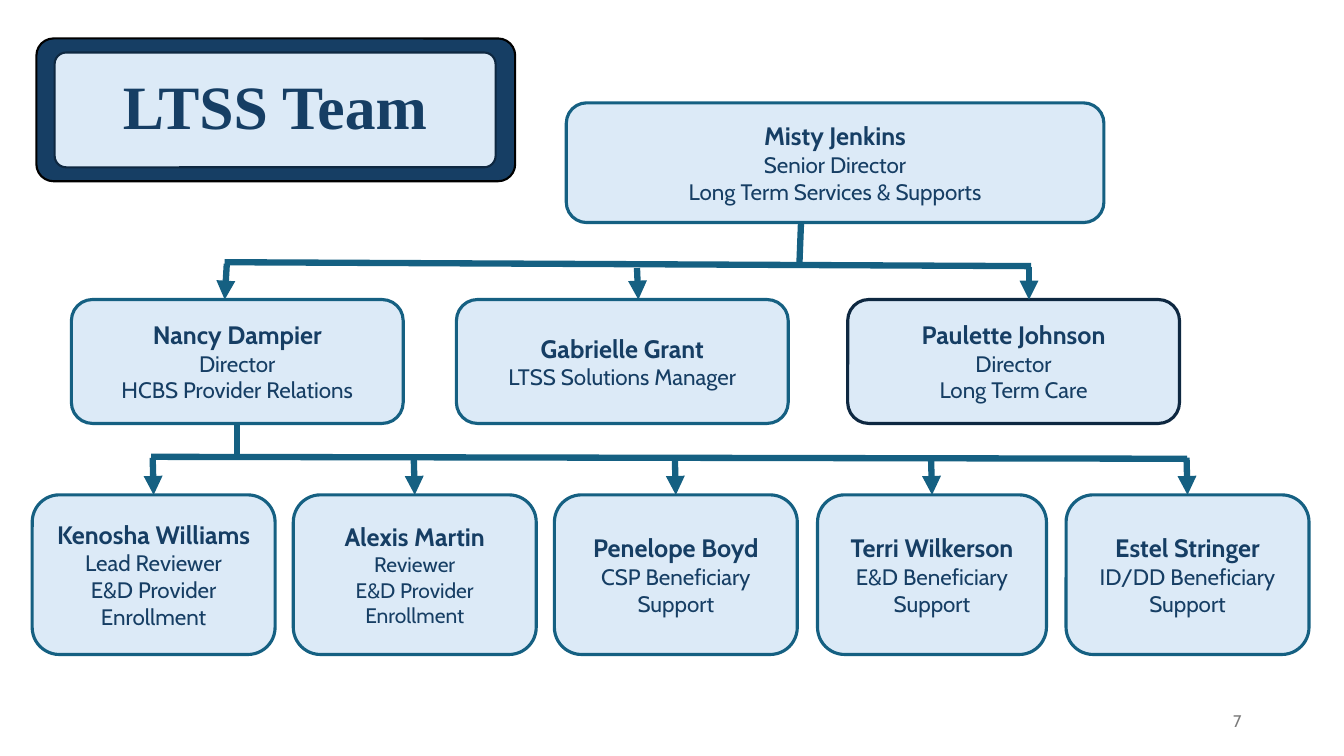
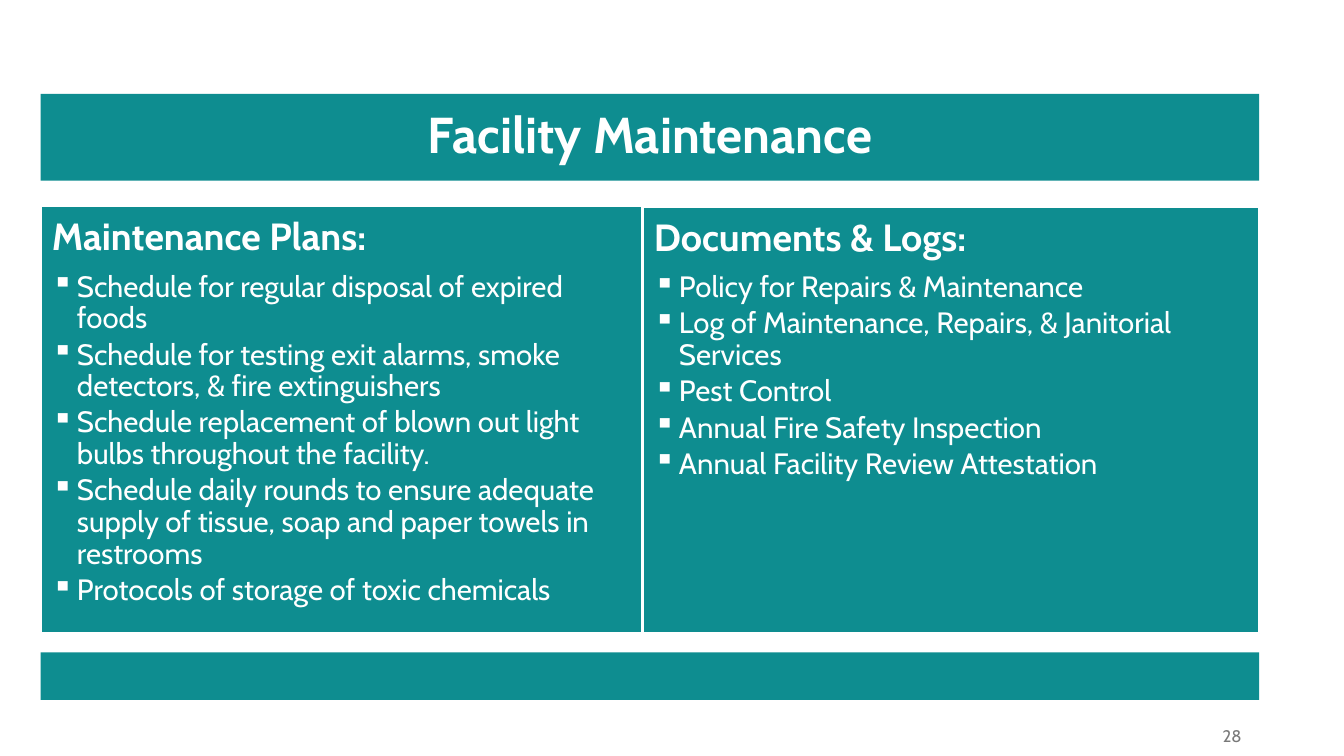
from dataclasses import dataclass

from lxml import etree
from pptx import Presentation
from pptx import util as u
from pptx.dml import color
from pptx.enum import shapes, text
from pptx.oxml import ns

Pt = u.Pt
ALIGN = text.PP_ALIGN
ANCHOR = text.MSO_ANCHOR


@dataclass(frozen=True)
class Theme:
    """Hold the colours, fonts and type sizes shared by the slides."""
    navy: str = "163E64"
    dark: str = "0E2841"
    black: str = "000000"
    pale: str = "DCEAF7"
    blue: str = "156082"
    teal: str = "0E8D90"
    white: str = "FFFFFF"
    grey: str = "797979"
    body_font: str = "Cabin"
    badge_font: str = "Times New Roman"
    badge_size: int = 44
    band_size: int = 36
    panel_heading_size: int = 27
    panel_item_size: int = 21
    name_size: int = 18
    role_size: int = 16
    small_role_size: int = 15
    number_size: int = 12
    card_line: float = 2.25
    thin_line: float = 1.5
    connector_line: float = 4.5


THEME = Theme()


def rgb(value):
    """Turn a hexadecimal string into a colour."""
    return color.RGBColor.from_string(value)


def add_text(frame, content, size, ink, bold=False, font=THEME.body_font,
             align=ALIGN.CENTER, spacing=None, after=None, bullet=None, indent=18):
    """Write one formatted paragraph at the end of a text frame."""
    paragraph = frame.paragraphs[0]
    if paragraph.runs:
        paragraph = frame.add_paragraph()
    paragraph.alignment = align
    if bullet:
        properties = paragraph._p.get_or_add_pPr()
        properties.set("marL", str(Pt(indent)))
        properties.set("indent", str(-Pt(indent)))
        etree.SubElement(properties, ns.qn("a:buChar")).set("char", bullet)
    if spacing:
        paragraph.line_spacing = spacing
    if after:
        paragraph.space_after = Pt(after)
    run = paragraph.add_run()
    run.text = content
    run.font.name = font
    run.font.size = Pt(size)
    run.font.bold = bold
    run.font.color.rgb = rgb(ink)


def add_box(slide, box, fill, line=None, width=THEME.thin_line, rounding=None,
            anchor=ANCHOR.MIDDLE, inset=None):
    """Draw a filled rectangle, rounded if a rounding is given."""
    kind = shapes.MSO_SHAPE.RECTANGLE if rounding is None else shapes.MSO_SHAPE.ROUNDED_RECTANGLE
    shape = slide.shapes.add_shape(kind, *map(Pt, box))
    shape.shadow.inherit = False
    shape.fill.solid()
    shape.fill.fore_color.rgb = rgb(fill)
    if rounding is not None:
        shape.adjustments[0] = rounding
    if line:
        shape.line.color.rgb = rgb(line)
        shape.line.width = Pt(width)
    else:
        shape.line.fill.background()
    frame = shape.text_frame
    frame.word_wrap = True
    frame.vertical_anchor = anchor
    if inset is not None:
        frame.margin_left = frame.margin_right = Pt(inset)
        frame.margin_top = frame.margin_bottom = Pt(inset)
    return shape


def add_line(slide, start, end, arrow=False):
    """Draw a thick straight connector between two points."""
    connector = slide.shapes.add_connector(
        shapes.MSO_CONNECTOR.STRAIGHT, *map(Pt, (*start, *end)))
    connector.line.color.rgb = rgb(THEME.blue)
    connector.line.width = Pt(THEME.connector_line)
    if arrow:
        outline = connector.line._get_or_add_ln()
        etree.SubElement(outline, ns.qn("a:tailEnd")).set("type", "triangle")
    etree.SubElement(connector._element.spPr, ns.qn("a:effectLst"))
    return connector


def add_page_number(slide, number, top):
    """Write the page number at the lower right."""
    holder = slide.shapes.add_textbox(*map(Pt, (678, top, 216, 29)))
    holder.text_frame.word_wrap = True
    holder.text_frame.vertical_anchor = ANCHOR.MIDDLE
    add_text(holder.text_frame, number, THEME.number_size, THEME.grey, align=ALIGN.RIGHT)


def add_title_badge(slide, box, title):
    """Draw a framed title badge."""
    left, top, width, height = box
    add_box(slide, box, THEME.navy, THEME.black, rounding=0.12)
    inner = (left + 13, top + 10, width - 27, height - 20)
    plate = add_box(slide, inner, THEME.pale, THEME.dark, rounding=0.1)
    add_text(plate.text_frame, title, THEME.badge_size, THEME.navy, bold=True,
             font=THEME.badge_font, spacing=0.9)


def add_card(slide, box, name, roles, line=THEME.blue, role_size=THEME.role_size):
    """Draw one person's card with a name and role lines."""
    card = add_box(slide, box, THEME.pale, line, THEME.card_line, rounding=0.17)
    add_text(card.text_frame, name, THEME.name_size, THEME.navy, bold=True)
    for role in roles:
        add_text(card.text_frame, role, role_size, THEME.navy)
    return card


def add_org_chart(slide, box):
    """Draw the three levels of the team and the lines between them."""
    left, top, width, height = box
    directors_top, staff_top = top + 140.5, top + 280
    upper_bus, lower_bus = top + 115, top + 253.5

    add_line(slide, (left + 85, lower_bus - 0.7), (left + 825, lower_bus + 0.7))
    add_line(slide, (left + 548, upper_bus + 1), (left + 549.5, top + 77))

    add_card(slide, (left + 381.5, top, 384, 85.5), "Misty Jenkins",
             ["Senior Director", "Long Term Services & Supports"])
    directors = [
        (28, "Nancy Dampier", ["Director", "HCBS Provider Relations"], THEME.blue),
        (303, "Gabrielle Grant", ["LTSS Solutions Manager"], THEME.blue),
        (582.5, "Paulette Johnson", ["Director", "Long Term Care"], THEME.dark),
    ]
    director_cards = [
        add_card(slide, (left + x, directors_top, 237, 88.5), name, roles, line)
        for x, name, roles, line in directors]

    staff = [
        (0, 173.5, "Kenosha Williams",
         ["Lead Reviewer", "E&D Provider Enrollment"], THEME.role_size),
        (186.5, 173.5, "Alexis Martin",
         ["Reviewer", "E&D Provider Enrollment"], THEME.small_role_size),
        (373, 173.5, "Penelope Boyd", ["CSP Beneficiary Support"], THEME.role_size),
        (561, 163.5, "Terri Wilkerson", ["E&D Beneficiary Support"], THEME.role_size),
        (738.5, 173.5, "Estel Stringer", ["ID/DD Beneficiary Support"], THEME.role_size),
    ]
    for x, card_width, name, roles, size in staff:
        card = add_card(slide, (left + x, staff_top, card_width, height - 280),
                        name, roles, role_size=size)
        middle = left + x + card_width / 2
        arrow = add_line(slide, (middle - 0.7, lower_bus), (middle, staff_top), arrow=True)
        arrow.end_connect(card, 0)

    trunk_x = left + 146.5
    trunk = add_line(slide, (trunk_x, directors_top + 88.5), (trunk_x, lower_bus))
    trunk.begin_connect(director_cards[0], 2)
    add_line(slide, (left + 137.5, upper_bus - 1.2), (left + 713.5, upper_bus + 1.6))
    for start_x, start_drop, end_x in [(139, 0, 137.5), (432, 3, 433), (712, 2.5, 712)]:
        add_line(slide, (left + start_x, upper_bus + start_drop),
                 (left + end_x, directors_top), arrow=True)


def add_panel(slide, box, heading, items):
    """Draw a teal panel with a heading and a bulleted list."""
    panel = add_box(slide, box, THEME.teal, THEME.white, anchor=ANCHOR.TOP, inset=8)
    frame = panel.text_frame
    add_text(frame, heading, THEME.panel_heading_size, THEME.white, bold=True,
             align=ALIGN.LEFT, spacing=0.9, after=9.45)
    for item in items:
        add_text(frame, item, THEME.panel_item_size, THEME.white, align=ALIGN.LEFT,
                 spacing=0.9, after=3.15, bullet="▪")


def add_team_slide(presentation):
    """Build the team chart slide."""
    slide = presentation.slides.add_slide(presentation.slide_layouts[6])
    add_page_number(slide, "7", 500.5)
    add_org_chart(slide, (23, 73.5, 912, 394))
    add_title_badge(slide, (26, 27.5, 342, 102), "LTSS Team")


def add_maintenance_slide(presentation):
    """Build the facility maintenance slide."""
    slide = presentation.slides.add_slide(presentation.slide_layouts[6])
    add_page_number(slide, "28", 511)
    left, width = 29, 870.5
    title_band = add_box(slide, (left, 67, width, 62), THEME.teal, inset=11)
    add_text(title_band.text_frame, "Facility Maintenance", THEME.band_size,
             THEME.white, bold=True, spacing=0.9)
    split = 430
    add_panel(slide, (left + split, 148, width - split, 304.5), "Documents & Logs:", [
        "Policy for Repairs & Maintenance",
        "Log of Maintenance, Repairs, & Janitorial Services",
        "Pest Control",
        "Annual Fire Safety Inspection",
        "Annual Facility Review Attestation",
    ])
    add_panel(slide, (left, 147.5, split, 304.5), "Maintenance Plans:", [
        "Schedule for regular disposal of expired foods",
        "Schedule for testing exit alarms, smoke detectors, & fire extinguishers",
        "Schedule replacement of blown out light bulbs throughout the facility.",
        "Schedule daily rounds to ensure adequate supply of tissue, soap and paper towels "
        "in restrooms",
        "Protocols of storage of toxic chemicals",
    ])
    add_box(slide, (left, 466, width, 34), THEME.teal)


def main():
    """Build and save the presentation."""
    presentation = Presentation()
    presentation.slide_width = Pt(960)
    presentation.slide_height = Pt(540)
    add_team_slide(presentation)
    add_maintenance_slide(presentation)
    presentation.save("out.pptx")


if __name__ == "__main__":
    main()
